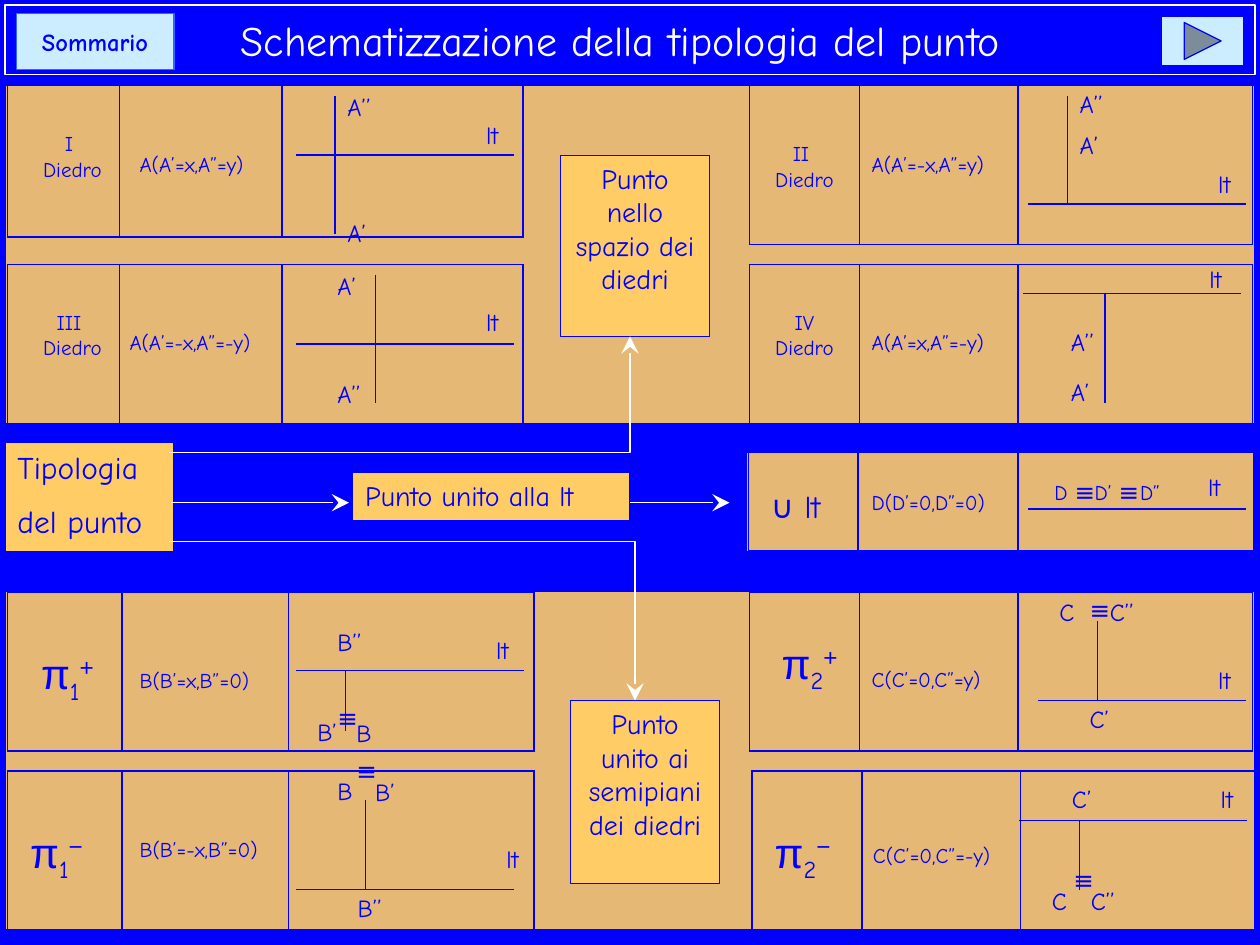
from lxml import etree
from pptx import Presentation
from pptx.dml.color import RGBColor
from pptx.enum.shapes import MSO_CONNECTOR as CONN, MSO_SHAPE as SHAPE
from pptx.enum.text import MSO_ANCHOR as ANCHOR, PP_ALIGN as ALIGN
from pptx.oxml.ns import qn
from pptx.util import Inches, Pt

BLUE, WHITE, ORANGE, PALE = "0000FF", "FFFFFF", "FFCC66", "CCECFF"
FONT = "Comic Neue"


def rgb(color):
    return RGBColor.from_string(color)


def inches(*values):
    return [Inches(v) for v in values]


def write(tf, text, size=14, color=BLUE, bold=False, align=ALIGN.LEFT,
          anchor=ANCHOR.TOP, gap=0):
    tf.word_wrap = True
    tf.vertical_anchor = anchor
    lines = text.split("\n") if isinstance(text, str) else [text]
    for i, line in enumerate(lines):
        p = tf.add_paragraph() if i else tf.paragraphs[0]
        p.alignment = align
        p.space_before = Pt(gap if i else 0)
        runs = [(line, FONT, 0)] if isinstance(line, str) else line
        for part, font, baseline in runs:
            r = p.add_run()
            r.text = part
            r.font.name = font
            r.font.size = Pt(size)
            r.font.bold = bold
            r.font.color.rgb = rgb(color)
            if baseline:
                r.font._element.set("baseline", str(baseline * 1000))


def add_label(s, x, y, text, w=0.47, h=0.33, **fmt):
    sp = s.shapes.add_textbox(*inches(x, y, w, h))
    write(sp.text_frame, text, **fmt)


def add_box(s, x, y, w, h, text=None, kind=SHAPE.RECTANGLE, fill=ORANGE,
            line=BLUE, width=0.75, alpha=None, **fmt):
    sp = s.shapes.add_shape(kind, *inches(x, y, w, h))
    sp.shadow.inherit = False
    sp.fill.solid()
    sp.fill.fore_color.rgb = rgb(fill)
    sp.line.color.rgb = rgb(line)
    sp.line.width = Pt(width)
    if alpha:
        clr = sp._element.spPr.find(qn("a:solidFill"))[0]
        etree.SubElement(clr, qn("a:alpha"), val=str(alpha * 1000))
    if text:
        write(sp.text_frame, text, **fmt)


def add_line(s, x1, y1, x2, y2, color=BLUE, arrow=False, bent=False):
    kind = CONN.ELBOW if bent else CONN.STRAIGHT
    c = s.shapes.add_connector(kind, *inches(x1, y1, x2, y2))
    c.line.color.rgb = rgb(color)
    c.line.width = Pt(0.75)
    spPr = c._element.spPr
    if bent:
        spPr.find(qn("a:prstGeom")).set("prst", "bentConnector2")
    if arrow:
        etree.SubElement(spPr.find(qn("a:ln")), qn("a:tailEnd"),
                         type="stealth", w="lg", len="lg")
    etree.SubElement(spPr, qn("a:effectLst"))


def add_grid(s, x, y, cols, h=1.26):
    frame = s.shapes.add_table(1, len(cols), *inches(x, y, sum(cols), h))
    table = frame.table
    table.first_row = table.horz_banding = False
    table.rows[0].height = Inches(h)
    for i, w in enumerate(cols):
        table.columns[i].width = Inches(w)
        cell = table.cell(0, i)
        tcPr = cell._tc.get_or_add_tcPr()
        for side in "LRTB":
            ln = etree.SubElement(tcPr, qn("a:ln" + side), w=str(Pt(1)))
            fill = etree.SubElement(ln, qn("a:solidFill"))
            etree.SubElement(fill, qn("a:srgbClr"), val=BLUE)
        cell.fill.background()


def add_title(s, text):
    sp = s.shapes.title
    sp.left, sp.top, sp.width, sp.height = inches(0.04, 0.04, 9.92, 0.55)
    sp.line.color.rgb = rgb(WHITE)
    sp.line.width = Pt(0.75)
    write(sp.text_frame, text, size=24, color=WHITE, anchor=ANCHOR.MIDDLE)
    sp.text_frame.margin_left = Inches(1.87)


def add_panels_and_grids(s):
    for x, y, w, h in [(5.92, 3.59, 4.03, 0.79), (0.04, 4.69, 9.92, 2.69),
                       (0.04, 0.68, 9.92, 2.68)]:
        add_box(s, x, y, w, h, alpha=90)
    right, upper, lower = [0.87, 1.26, 1.86], [0.89, 1.29, 1.91], [0.91, 1.32, 1.95]
    for x, y, cols, h in [
            (5.95, 0.68, right, 1.26), (0.06, 0.68, upper, 1.2),
            (5.95, 2.1, right, 1.26), (0.06, 2.1, upper, 1.26),
            (5.95, 4.7, right, 1.26), (0.06, 4.7, lower, 1.26),
            (5.97, 6.12, right, 1.26), (0.06, 6.12, lower, 1.26),
            (5.94, 3.59, [0.87, 1.27, 1.88], 0.78)]:
        add_grid(s, x, y, cols, h)


def add_cases(s):
    for x, y, name in [(0.14, 0.99, "I "), (5.95, 1.07, "II "),
                       (0.14, 2.41, "III "), (5.95, 2.41, "IV")]:
        add_label(s, x, y, name + "\nDiedro", w=0.87, h=0.5, size=12,
                  align=ALIGN.CENTER)
    for x, y, w, index, sign, align in [
            (0.14, 5.09, 0.79, "1", "+", ALIGN.CENTER),
            (6.03, 5.01, 0.79, "2", "+", ALIGN.CENTER),
            (0.14, 6.51, 0.71, "1", "−", ALIGN.LEFT),
            (6.05, 6.51, 0.71, "2", "−", ALIGN.LEFT)]:
        runs = [("π", "Arial", 0), (index, FONT, -25), (sign, "Arial", 30)]
        add_label(s, x, y, runs, w=w, h=0.5, size=24, align=align)
    add_label(s, 6.02, 3.82, "∪ lt", w=0.71, h=0.4, size=18)
    for x, y, formula in [
            (1.01, 1.15, "A(A’=x,A”=y)"), (6.82, 1.15, "A(A’=-x,A”=y)"),
            (0.93, 2.57, "A(A’=-x,A”=-y)"), (6.82, 2.57, "A(A’=x,A”=-y)"),
            (1.01, 5.25, "B(B’=x,B”=0)"), (1.01, 6.59, "B(B’=-x,B”=0)"),
            (6.82, 5.24, "C(C’=0,C”=y)"), (6.83, 6.64, "C(C’=0,C”=-y)"),
            (6.82, 3.84, "D(D’=0,D”=0)")]:
        add_label(s, x, y, formula, w=1.34, h=0.3, size=12)


def add_projections(s):
    for ends in [
            (2.35, 1.23, 4.08, 1.23), (2.66, 0.76, 2.66, 1.86),
            (8.16, 1.62, 9.89, 1.62), (8.47, 1.62, 8.47, 0.76),
            (2.35, 2.73, 4.08, 2.73), (2.98, 2.18, 2.98, 3.2),
            (8.12, 2.33, 9.85, 2.33), (8.77, 3.2, 8.77, 2.33),
            (2.35, 5.32, 4.16, 5.32), (2.74, 5.32, 2.74, 5.8),
            (2.35, 7.06, 4.08, 7.06), (2.9, 7.06, 2.9, 6.35),
            (8.24, 5.56, 9.89, 5.56), (8.71, 5.56, 8.71, 4.93),
            (8.09, 6.51, 9.9, 6.51), (8.57, 6.51, 8.57, 7.06),
            (8.16, 4.04, 9.89, 4.04)]:
        add_line(s, *ends)
    points = {
        "lt": [(3.76, 0.9), (9.57, 1.29), (3.76, 2.39), (9.5, 2.05), (3.84, 4.99),
               (9.59, 6.17), (3.92, 6.65), (9.57, 5.23), (9.49, 3.7)],
        "A’": [(2.66, 1.68), (8.47, 0.98), (2.58, 2.1), (8.4, 2.94)],
        "A’’": [(2.66, 0.68), (8.47, 0.66), (2.58, 2.96), (8.4, 2.55)],
        "B": [(2.73, 5.65), (2.58, 6.11)],
        "B’": [(2.42, 5.64), (2.88, 6.12)],
        "B’’": [(2.58, 4.93), (2.74, 7.04)],
        "C": [(8.31, 4.69), (8.25, 6.98)],
        "C’": [(8.55, 5.54), (8.41, 6.17)],
        "C’’": [(8.71, 4.69), (8.56, 6.98)],
        "≡": [(2.58, 5.53), (2.73, 5.95), (8.78, 3.74), (8.43, 3.74),
              (8.55, 4.67), (8.42, 6.82)],
    }
    for text, places in points.items():
        for x, y in places:
            add_label(s, x, y, text)
    for x, text in [(8.27, "D"), (8.59, "D’"), (8.95, "D”")]:
        add_label(s, x, 3.76, text, h=0.3, size=12)


def add_flow(s):
    add_box(s, 0.04, 3.51, 1.34, 0.87, "Tipologia\ndel punto", width=1, size=18, gap=9)
    add_box(s, 4.45, 1.23, 1.18, 1.44, "Punto nello spazio dei diedri",
            width=0.25, size=16, align=ALIGN.CENTER)
    add_box(s, 4.53, 5.56, 1.18, 1.45, "Punto unito ai semipiani dei diedri",
            size=16, align=ALIGN.CENTER)
    add_box(s, 2.8, 3.75, 2.2, 0.38, "Punto unito alla lt", size=16)
    for *ends, bent in [(1.34, 3.59, 5, 2.67, True), (1.34, 4.3, 5.04, 5.56, True),
                        (1.36, 3.99, 2.77, 3.99, False), (5, 3.99, 5.79, 3.99, False)]:
        add_line(s, *ends, color=WHITE, arrow=True, bent=bent)


def main():
    prs = Presentation()
    prs.slide_width, prs.slide_height = inches(10, 7.5)
    s = prs.slides.add_slide(prs.slide_layouts[5])
    s.background.fill.solid()
    s.background.fill.fore_color.rgb = rgb(BLUE)
    add_title(s, "Schematizzazione della tipologia del punto")
    add_panels_and_grids(s)
    add_cases(s)
    add_projections(s)
    add_flow(s)
    add_box(s, 0.13, 0.11, 1.25, 0.44, "Sommario", kind=SHAPE.ACTION_BUTTON_CUSTOM,
            fill=PALE, line="3366FF", width=0, bold=True, align=ALIGN.CENTER,
            anchor=ANCHOR.MIDDLE)
    add_box(s, 9.22, 0.13, 0.65, 0.39, kind=SHAPE.ACTION_BUTTON_FORWARD_OR_NEXT,
            fill=PALE, width=0)
    prs.save("out.pptx")


if __name__ == "__main__":
    main()
